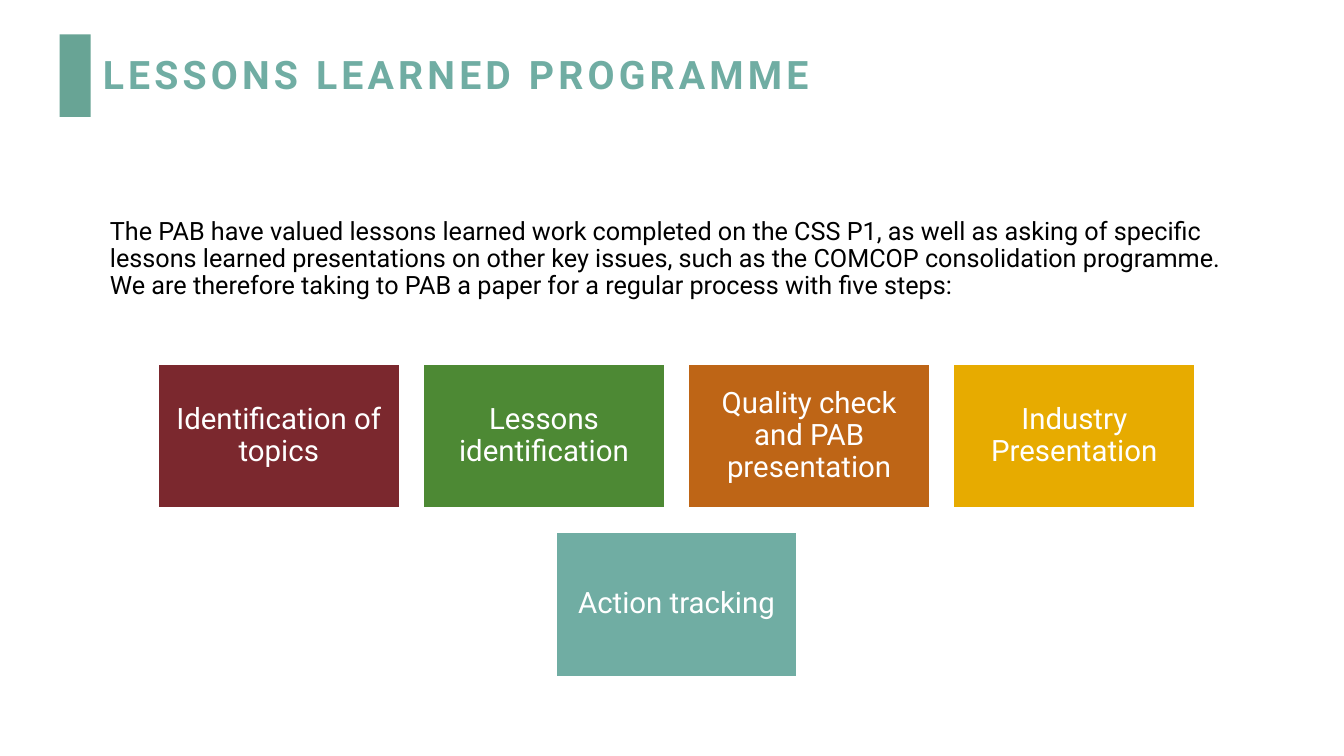
from pptx import Presentation
from pptx.dml.color import RGBColor
from pptx.enum import shapes, text
from pptx.oxml.ns import qn
from pptx.util import Inches, Pt

TITLE = "LESSONS LEARNED PROGRAMME"
INTRO = (
    "The PAB have valued lessons learned work completed on the CSS P1, as well as "
    "asking of specific lessons learned presentations on other key issues, such as "
    "the COMCOP consolidation programme. We are therefore taking to PAB a paper for "
    "a regular process with five steps:"
)
STEP_ROWS = [
    [
        ("Identification of topics", "maroon"),
        ("Lessons identification", "green"),
        ("Quality check and PAB presentation", "orange"),
        ("Industry Presentation", "yellow"),
    ],
    [("Action tracking", "teal")],
]
COLORS = {
    "bar": "68A495",
    "teal": "70ADA3",
    "maroon": "7B282E",
    "green": "4D8934",
    "orange": "BE6516",
    "yellow": "E7AB00",
    "white": "FFFFFF",
    "black": "000000",
}
FONT = "Roboto"
STEP_WIDTH, STEP_HEIGHT, STEP_GAP = 2.39, 1.43, 0.24
STEPS_CENTER, STEPS_TOP = 6.71, 3.61


def color(name):
    return RGBColor.from_string(COLORS[name])


def place(shape, left, top, width, height):
    shape.left, shape.top = Inches(left), Inches(top)
    shape.width, shape.height = Inches(width), Inches(height)


def remove_bullet(paragraph):
    properties = paragraph._p.get_or_add_pPr()
    properties.set("marL", "0")
    properties.set("indent", "0")
    properties.append(properties.makeelement(qn("a:buNone"), {}))


def write(shape, words, size, color_name, align, anchor, bold=False):
    frame = shape.text_frame
    frame.text = words
    frame.word_wrap = True
    frame.auto_size = text.MSO_AUTO_SIZE.NONE
    frame.vertical_anchor = anchor
    paragraph = frame.paragraphs[0]
    paragraph.alignment = align
    paragraph.line_spacing = 0.9
    paragraph.space_before = Pt(0)
    remove_bullet(paragraph)
    font = paragraph.font
    font.name, font.size, font.bold = FONT, Pt(size), bold
    font.color.rgb = color(color_name)
    return paragraph


def add_rectangle(slide, left, top, width, height, fill):
    shape = slide.shapes.add_shape(
        shapes.MSO_SHAPE.RECTANGLE,
        Inches(left), Inches(top), Inches(width), Inches(height),
    )
    shape.shadow.inherit = False
    shape.fill.solid()
    shape.fill.fore_color.rgb = color(fill)
    shape.line.fill.background()
    return shape


def add_step(slide, left, top, label, fill):
    step = add_rectangle(slide, left, top, STEP_WIDTH, STEP_HEIGHT, fill)
    step.line.color.rgb = color("white")
    step.line.width = Pt(1)
    frame = step.text_frame
    frame.margin_left = frame.margin_right = Inches(0.09)
    frame.margin_top = frame.margin_bottom = Inches(0.09)
    write(step, label, 21, "white", text.PP_ALIGN.CENTER, text.MSO_ANCHOR.MIDDLE)


def main():
    presentation = Presentation()
    presentation.slide_width = Inches(13.33)
    presentation.slide_height = Inches(7.5)
    slide = presentation.slides.add_slide(presentation.slide_layouts[1])

    # Title with its accent bar
    add_rectangle(slide, 0.59, 0.34, 0.31, 0.82, "bar")
    title = slide.shapes.title
    place(title, 0.92, 0.4, 10.15, 0.72)
    heading = write(title, TITLE, 28, "teal", text.PP_ALIGN.LEFT,
                    text.MSO_ANCHOR.MIDDLE, bold=True)
    heading.runs[0].font._element.set("spc", "300")

    # Introduction
    body = slide.placeholders[1]
    place(body, 0.99, 2.12, 11.49, 4.57)
    write(body, INTRO, 18, "black", text.PP_ALIGN.LEFT, text.MSO_ANCHOR.TOP)

    # Process steps, each row centred
    for row, steps in enumerate(STEP_ROWS):
        row_width = len(steps) * (STEP_WIDTH + STEP_GAP) - STEP_GAP
        top = STEPS_TOP + row * (STEP_HEIGHT + STEP_GAP)
        for column, (label, fill) in enumerate(steps):
            left = STEPS_CENTER - row_width / 2 + column * (STEP_WIDTH + STEP_GAP)
            add_step(slide, left, top, label, fill)

    presentation.save("out.pptx")


if __name__ == "__main__":
    main()
